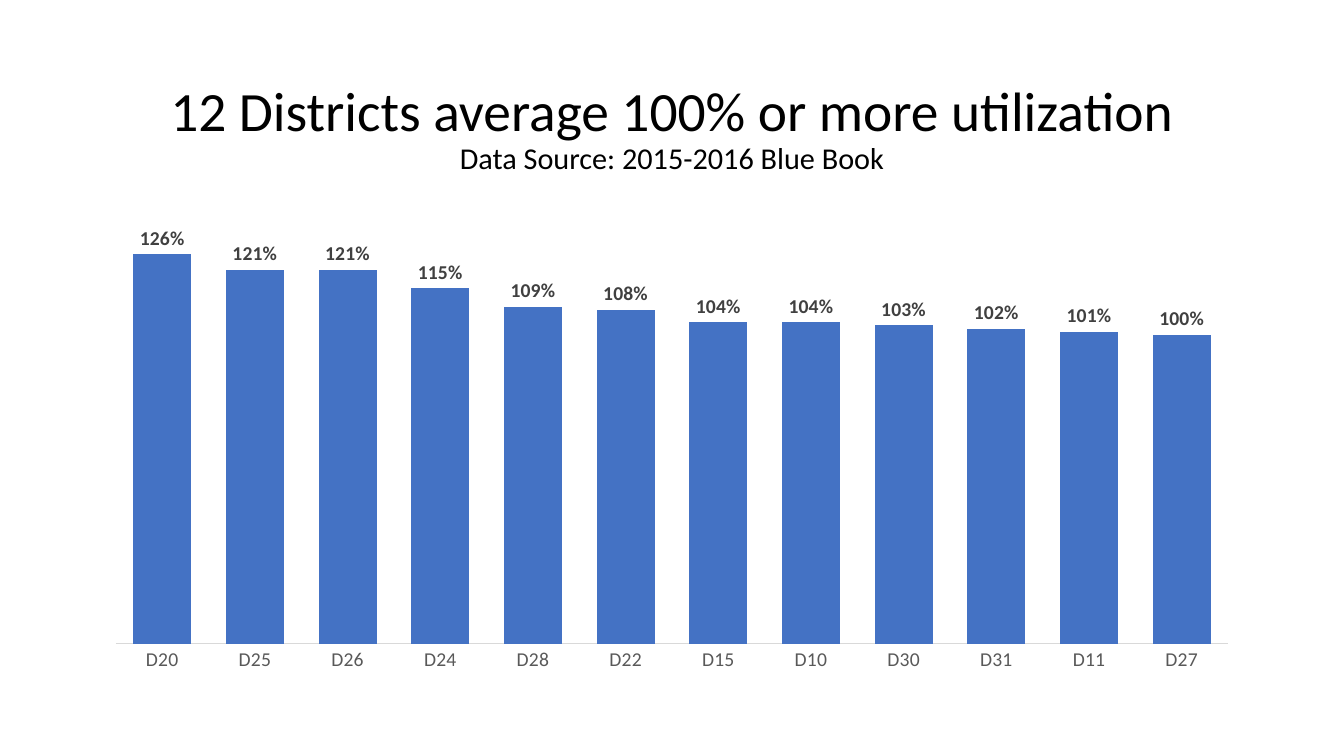
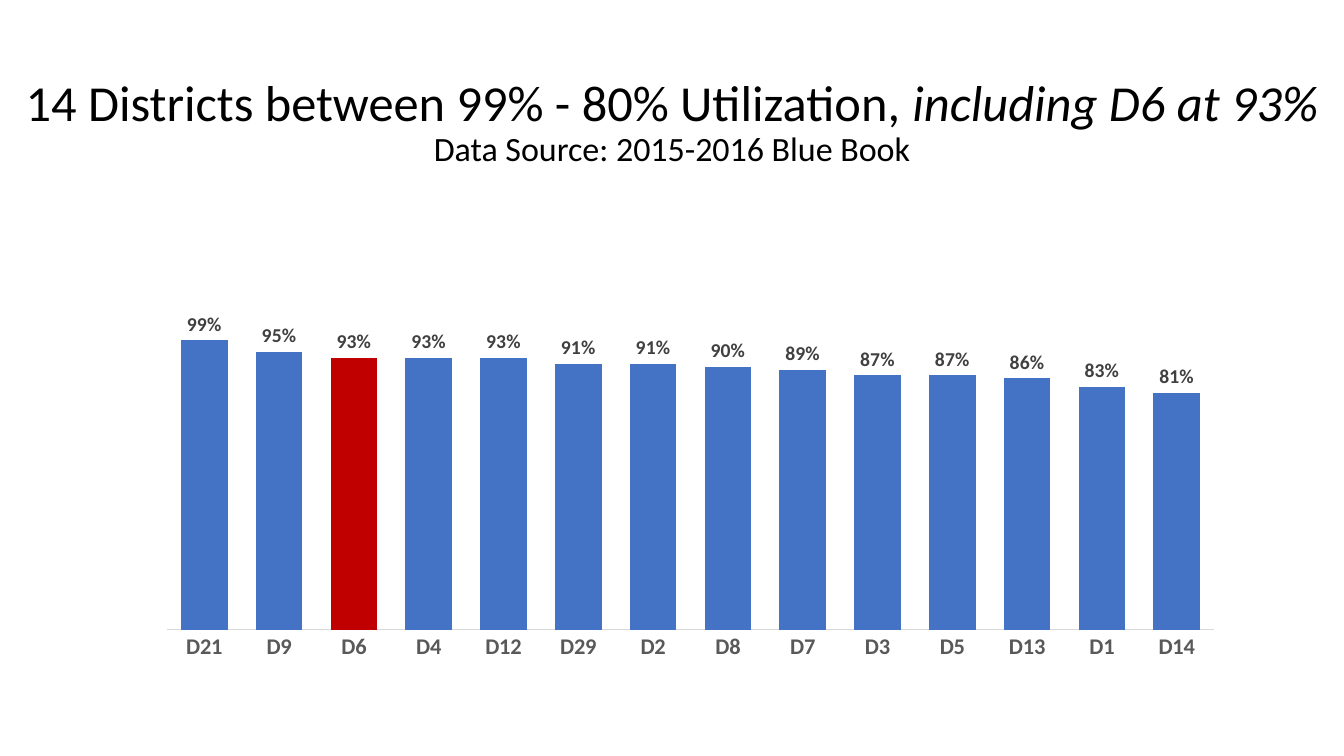
import pptx
import pptx.chart.data
import pptx.dml.color
import pptx.enum.chart
import pptx.enum.text
import pptx.util
from lxml import etree

Inches, Pt = pptx.util.Inches, pptx.util.Pt

WIDTH, HEIGHT = 13.33, 7.5
MARGIN = 0.92
FONT = "Calibri"
BLACK, BLUE, RED = "000000", "4472C4", "C00000"
LABEL_GREY, AXIS_GREY, LINE_GREY = "404040", "595959", "D9D9D9"
SUBTITLE = "Data Source: 2015-2016 Blue Book"

SLIDES = [
    {
        "title": [("12 Districts average 100% or more utilization", False)],
        "title_size": 39.6,
        "subtitle_size": 21.6,
        "title_box": (MARGIN, 0.27, WIDTH - 2 * MARGIN, 1.45),
        "title_inset": 0.56,
        "chart_top": 2,
        "chart_height": 4.76,
        "axis_size": 14,
        "axis_bold": False,
        "axis_maximum": 1.4,
        "gap": 60,
        "plot": None,
        "highlight": None,
        "districts": {
            "D20": 1.26, "D25": 1.21, "D26": 1.21, "D24": 1.15,
            "D28": 1.09, "D22": 1.08, "D15": 1.04, "D10": 1.04,
            "D30": 1.03, "D31": 1.02, "D11": 1.01, "D27": 1,
        },
    },
    {
        "title": [("14 Districts between 99% - 80% Utilization, ", False),
                  ("including D6 at 93%", True)],
        "title_size": 36,
        "subtitle_size": 24.3,
        "title_box": (0, 0.55, WIDTH, 1.45),
        "title_inset": 0.22,
        "chart_top": 1.78,
        "chart_height": 4.97,
        "axis_size": 16,
        "axis_bold": True,
        "axis_maximum": 1.2,
        "gap": 61,
        "plot": {"x": 0.064, "y": 0.199, "w": 0.904, "h": 0.7},
        "highlight": "D6",
        "districts": {
            "D21": 0.99, "D9": 0.95, "D6": 0.93, "D4": 0.93, "D12": 0.93,
            "D29": 0.91, "D2": 0.91, "D8": 0.9, "D7": 0.89, "D3": 0.87,
            "D5": 0.87, "D13": 0.86, "D1": 0.83, "D14": 0.81,
        },
    },
]


def color(hex_text):
    return pptx.dml.color.RGBColor.from_string(hex_text)


def fill(part, hex_text):
    part.format.fill.solid()
    part.format.fill.fore_color.rgb = color(hex_text)


def style_font(font, size, hex_text, bold=False):
    font.name = FONT
    font.size = Pt(size)
    font.bold = bold
    font.color.rgb = color(hex_text)


def add_title(slide, content):
    title = slide.shapes.title
    title.left, title.top, title.width, title.height = map(Inches, content["title_box"])
    frame = title.text_frame
    frame.word_wrap = True
    frame.auto_size = pptx.enum.text.MSO_AUTO_SIZE.NONE
    frame.vertical_anchor = pptx.enum.text.MSO_ANCHOR.TOP
    frame.margin_top = Inches(content["title_inset"])
    frame.margin_bottom = 0
    lines = [(content["title"], content["title_size"]),
             ([(SUBTITLE, False)], content["subtitle_size"])]
    for index, (runs, size) in enumerate(lines):
        paragraph = frame.add_paragraph() if index else frame.paragraphs[0]
        paragraph.alignment = pptx.enum.text.PP_ALIGN.CENTER
        paragraph.line_spacing = 0.9
        paragraph.space_before = Pt(0)
        style_font(paragraph.font, size, BLACK)
        for text, italic in runs:
            run = paragraph.add_run()
            run.text = text
            if italic:
                run.font.italic = True


def set_plot_area(chart, shares):
    """Fix the inner plot area, given as shares of the chart's size."""
    plot_area = chart.plots[0]._element.getparent()
    namespace = plot_area.nsmap["c"]

    def tag(name):
        return f"{{{namespace}}}{name}"

    for old_layout in plot_area.findall(tag("layout")):
        plot_area.remove(old_layout)
    layout = etree.Element(tag("layout"))
    manual = etree.SubElement(layout, tag("manualLayout"))
    settings = {"layoutTarget": "inner", "xMode": "edge", "yMode": "edge", **shares}
    for name, value in settings.items():
        etree.SubElement(manual, tag(name)).set("val", str(value))
    plot_area.insert(0, layout)


def add_utilization_chart(slide, content):
    districts = content["districts"]
    data = pptx.chart.data.CategoryChartData(number_format="0%")
    data.categories = list(districts)
    data.add_series("Series 1", list(districts.values()))
    chart = slide.shapes.add_chart(
        pptx.enum.chart.XL_CHART_TYPE.COLUMN_CLUSTERED,
        Inches(MARGIN), Inches(content["chart_top"]),
        Inches(WIDTH - 2 * MARGIN), Inches(content["chart_height"]), data).chart
    chart.has_legend = False
    chart.has_title = False
    style_font(chart.font, 10, BLACK)

    category_axis = chart.category_axis
    category_axis.major_tick_mark = pptx.enum.chart.XL_TICK_MARK.NONE
    category_axis.format.line.color.rgb = color(LINE_GREY)
    category_axis.format.line.width = Pt(0.75)
    style_font(category_axis.tick_labels.font, content["axis_size"], AXIS_GREY,
               content["axis_bold"])

    value_axis = chart.value_axis
    value_axis.minimum_scale = 0
    value_axis.maximum_scale = content["axis_maximum"]
    value_axis.has_major_gridlines = False
    value_axis.visible = False

    plot = chart.plots[0]
    plot.vary_by_categories = False
    plot.gap_width = content["gap"]
    plot.overlap = -27
    series = plot.series[0]
    fill(series, BLUE)
    if content["highlight"]:
        fill(series.points[list(districts).index(content["highlight"])], RED)

    labels = series.data_labels
    labels.show_value = True
    labels.number_format = "0%"
    labels.number_format_is_linked = False
    labels.position = pptx.enum.chart.XL_LABEL_POSITION.OUTSIDE_END
    style_font(labels.font, 14, LABEL_GREY, bold=True)
    if content["plot"]:
        set_plot_area(chart, content["plot"])


def main():
    presentation = pptx.Presentation()
    presentation.slide_width = Inches(WIDTH)
    presentation.slide_height = Inches(HEIGHT)
    title_only = presentation.slide_layouts.get_by_name("Title Only")
    for content in SLIDES:
        slide = presentation.slides.add_slide(title_only)
        add_title(slide, content)
        add_utilization_chart(slide, content)
    presentation.save("out.pptx")


if __name__ == "__main__":
    main()
